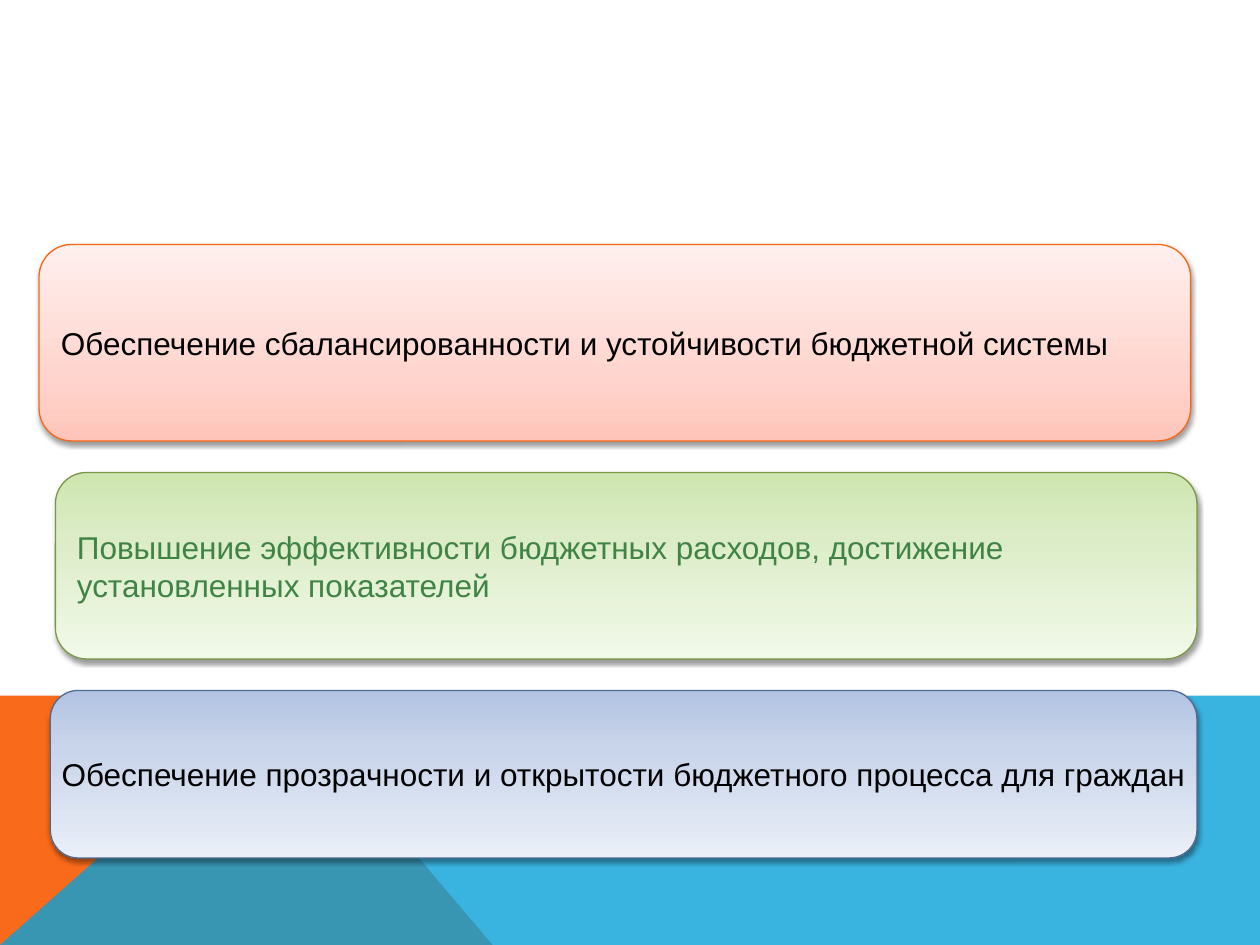
from dataclasses import dataclass

from lxml import etree
from pptx import Presentation
from pptx.dml.color import RGBColor
from pptx.enum.shapes import MSO_SHAPE
from pptx.enum.text import MSO_ANCHOR, PP_ALIGN
from pptx.oxml.ns import qn
from pptx.util import Inches, Pt

ROUNDED = MSO_SHAPE.ROUNDED_RECTANGLE
MIDDLE = MSO_ANCHOR.MIDDLE
LEFT, CENTER, JUSTIFY = PP_ALIGN.LEFT, PP_ALIGN.CENTER, PP_ALIGN.JUSTIFY

SLIDE_W, SLIDE_H = 10, 7.5
BAND_TOP = 5.52
PEAK_X, FOOT_X = 2.23, 3.91
STOP_POSITIONS = (0, 35, 100)
UPWARD, DOWNWARD = 90, 270

BLACK = RGBColor(0x00, 0x00, 0x00)
ORANGE = RGBColor(0xF9, 0x6A, 0x1B)
SKY = RGBColor(0x08, 0xA1, 0xD9)
ORANGE_EDGE = RGBColor(0xF9, 0x66, 0x15)
GREEN_EDGE = RGBColor(0x7A, 0x97, 0x46)
BLUE_EDGE = RGBColor(0x4D, 0x6B, 0x92)
GREEN_TEXT = RGBColor(0x3F, 0x83, 0x45)
PINKS = (RGBColor(0xFF, 0xC5, 0xBA), RGBColor(0xFF, 0xD6, 0xCF), RGBColor(0xFF, 0xEF, 0xED))
GREENS = (RGBColor(0xCD, 0xE6, 0xAF), RGBColor(0xDC, 0xEC, 0xC7), RGBColor(0xF1, 0xF9, 0xE9))
BLUES = (RGBColor(0xB2, 0xC3, 0xE3), RGBColor(0xC9, 0xD5, 0xEA), RGBColor(0xEA, 0xEF, 0xF8))


@dataclass(frozen=True)
class Band:
    points: tuple[tuple[float, float], ...]
    color: RGBColor
    opacity: int = 100


@dataclass(frozen=True)
class Goal:
    left: float
    top: float
    width: float
    height: float
    lines: tuple[str, ...]
    gradient: tuple[RGBColor, ...]
    direction: int
    edge: RGBColor
    text_color: RGBColor = BLACK
    align: PP_ALIGN = LEFT
    space_before: float = 0


BANDS = (
    Band(((0, SLIDE_H), (0, BAND_TOP), (PEAK_X, BAND_TOP), (FOOT_X, SLIDE_H)), ORANGE),
    Band(((0, SLIDE_H), (PEAK_X, BAND_TOP), (SLIDE_W, BAND_TOP), (SLIDE_W, SLIDE_H)), SKY, 80),
)

GOALS = (
    Goal(0.31, 1.94, 9.14, 1.56,
         ("Обеспечение сбалансированности и устойчивости бюджетной системы",),
         PINKS, UPWARD, ORANGE_EDGE, space_before=5.3),
    Goal(0.44, 3.75, 9.06, 1.48,
         ("Повышение эффективности бюджетных расходов, достижение",
          "установленных показателей"),
         GREENS, DOWNWARD, GREEN_EDGE, GREEN_TEXT, JUSTIFY),
    Goal(0.4, 5.48, 9.1, 1.33,
         ("Обеспечение прозрачности и открытости бюджетного процесса для граждан",),
         BLUES, DOWNWARD, BLUE_EDGE, align=CENTER),
)


def add_color(parent, color: RGBColor, opacity: int = 100) -> None:
    node = etree.SubElement(parent, qn("a:srgbClr"), val=str(color))
    if opacity < 100:
        etree.SubElement(node, qn("a:alpha"), val=str(opacity * 1000))


def draw_band(slide, band: Band) -> None:
    start, *rest = [(Inches(x), Inches(y)) for x, y in band.points]
    builder = slide.shapes.build_freeform(*start)
    builder.add_line_segments(rest, close=True)
    shape = builder.convert_to_shape()
    shape.shadow.inherit = False
    shape.line.fill.background()
    shape.fill.solid()
    shape.fill.fore_color.rgb = band.color
    solid = shape.element.spPr.find(qn("a:solidFill"))
    solid.clear()
    add_color(solid, band.color, band.opacity)


def fill_gradient(shape, colors: tuple[RGBColor, ...], direction: int) -> None:
    shape.fill.gradient()
    shape.fill.gradient_angle = direction
    stops = shape.element.spPr.find(qn("a:gradFill")).find(qn("a:gsLst"))
    stops.clear()
    for position, color in zip(STOP_POSITIONS, colors):
        add_color(etree.SubElement(stops, qn("a:gs"), pos=str(position * 1000)), color)


def cast_shadow(shape) -> None:
    shape.shadow.inherit = False
    effects = shape.element.spPr.find(qn("a:effectLst"))
    shadow = etree.SubElement(effects, qn("a:outerShdw"), blurRad=str(Pt(3.1)),
                              dist=str(Pt(1.6)), dir="5400000", rotWithShape="0")
    add_color(shadow, BLACK, 38)


def draw_goal(slide, goal: Goal) -> None:
    bounds = (Inches(v) for v in (goal.left, goal.top, goal.width, goal.height))
    shape = slide.shapes.add_shape(ROUNDED, *bounds)
    fill_gradient(shape, goal.gradient, goal.direction)
    shape.line.color.rgb = goal.edge
    shape.line.width = Pt(0.75)
    cast_shadow(shape)

    frame = shape.text_frame
    frame.word_wrap = False
    frame.vertical_anchor = MIDDLE
    frame.text = "\n".join(goal.lines)
    for paragraph in frame.paragraphs:
        paragraph.alignment = goal.align
        paragraph.space_before = Pt(goal.space_before)
        paragraph.font.name = "Arial"
        paragraph.font.size = Pt(18)
        paragraph.font.color.rgb = goal.text_color


def main() -> None:
    deck = Presentation()
    deck.slide_width, deck.slide_height = Inches(SLIDE_W), Inches(SLIDE_H)
    slide = deck.slides.add_slide(deck.slide_layouts.get_by_name("Blank"))
    for band in BANDS:
        draw_band(slide, band)
    for goal in GOALS:
        draw_goal(slide, goal)
    deck.save("out.pptx")


if __name__ == "__main__":
    main()
